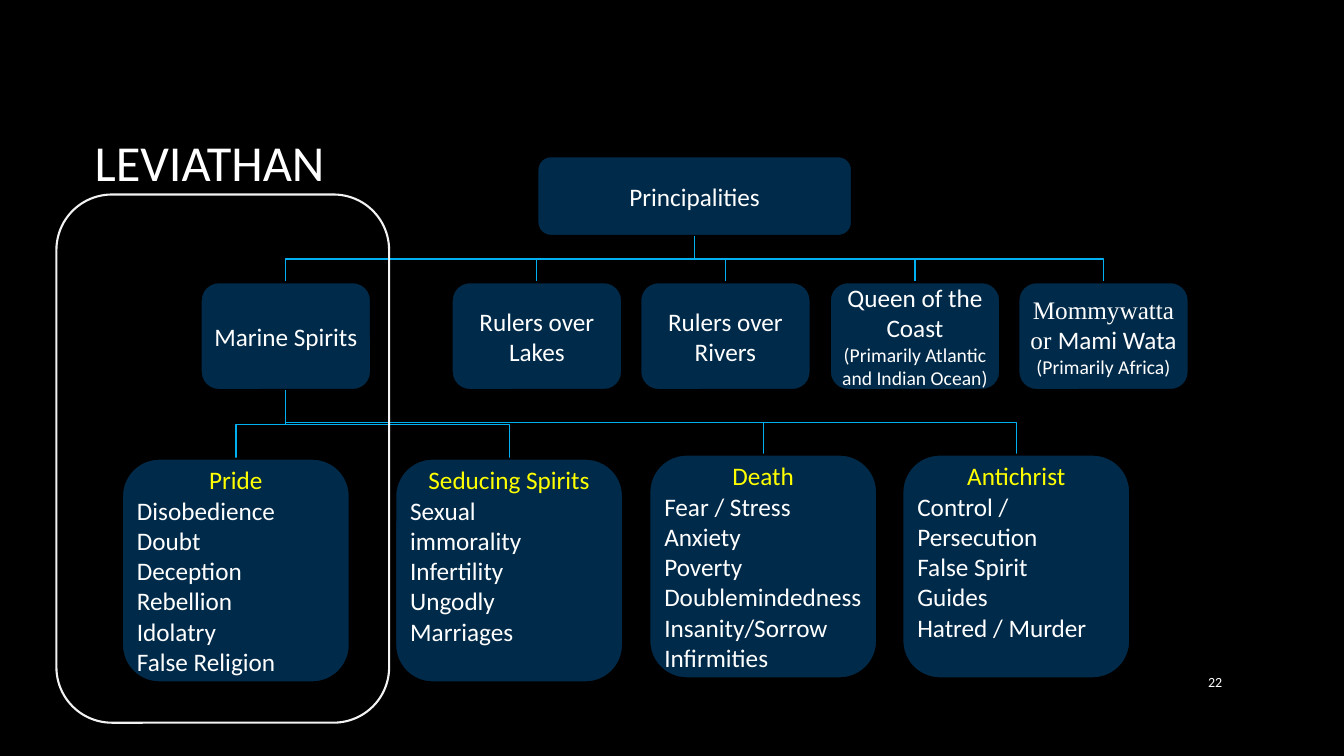
from lxml import etree
from pptx import Presentation
from pptx.dml.color import RGBColor
from pptx.enum.shapes import MSO_CONNECTOR, MSO_SHAPE
from pptx.enum.text import MSO_ANCHOR, PP_ALIGN
from pptx.oxml.ns import qn
from pptx.util import Inches, Pt

BLACK = RGBColor(0x00, 0x00, 0x00)
WHITE = RGBColor(0xFF, 0xFF, 0xFF)
OFF_WHITE = RGBColor(0xF2, 0xF2, 0xF2)
BLUE = RGBColor(0x00, 0x70, 0xC0)
SKY = RGBColor(0x00, 0xB0, 0xF0)
YELLOW = RGBColor(0xFF, 0xFF, 0x00)

SANS, SERIF = "Calibri", "Times New Roman"
BODY = {"size": Pt(18), "name": SANS, "color": WHITE}
NOTE = {**BODY, "size": Pt(14)}
HEADING = {**BODY, "color": YELLOW}
CENTER, LEFT, RIGHT = PP_ALIGN.CENTER, PP_ALIGN.LEFT, PP_ALIGN.RIGHT

ROOT_BOX = (5.33, 1.55, 3.12, 0.79)
RULER_TOP, RULER_SIZE = 2.8, (1.69, 1.07)
RULERS = [
    (1.99, [[("Marine Spirits", BODY)]]),
    (4.48, [[("Rulers over Lakes", BODY)]]),
    (6.35, [[("Rulers over Rivers", BODY)]]),
    (8.23, [[("Queen of the Coast", BODY)],
            [("(Primarily Atlantic and Indian Ocean)", NOTE)]]),
    (10.1, [[("Mommywatta or ", {**BODY, "name": SERIF}), ("Mami Wata", BODY)],
            [("(Primarily Africa)", NOTE)]]),
]
SPIRIT_SIZE, SPIRIT_LINES, LINE_HEIGHT = (2.26, 2.22), 7, 0.3
SPIRITS = [
    (1.21, 4.55, "Pride", ["Disobedience", "Doubt", "Deception", "Rebellion",
                           "Idolatry", "False Religion"]),
    (3.92, 4.55, "Seducing Spirits", ["Sexual", "immorality", "Infertility",
                                      "Ungodly", "Marriages"]),
    (6.44, 4.51, "Death", ["Fear / Stress", "Anxiety", "Poverty", "Doublemindedness",
                           "Insanity/Sorrow", "Infirmities"]),
    (8.95, 4.51, "Antichrist", ["Control /", "Persecution", "False Spirit",
                                "Guides", "Hatred / Murder"]),
]


def write(shape, lines, insets=(0.1, 0.05, 0.1, 0.05)):
    """Fill a shape with (alignment, spans) lines; insets run left, top, right, bottom."""
    frame = shape.text_frame
    frame.word_wrap = True
    frame.vertical_anchor = MSO_ANCHOR.MIDDLE
    for side, inset in zip(("left", "top", "right", "bottom"), insets):
        setattr(frame, f"margin_{side}", Inches(inset))
    for index, (alignment, spans) in enumerate(lines):
        para = frame.add_paragraph() if index else frame.paragraphs[0]
        para.alignment = alignment
        for text, style in spans:
            span = para.add_run()
            span.text = text
            for key, value in style.items():
                if key == "color":
                    span.font.color.rgb = value
                else:
                    setattr(span.font, key, value)


def add_label(page, box, text, style, alignment):
    label = page.shapes.add_textbox(*map(Inches, box))
    write(label, [(alignment, [(text, style)])])


def add_rounded(page, box, line_color):
    shape = page.shapes.add_shape(MSO_SHAPE.ROUNDED_RECTANGLE, *map(Inches, box))
    shape.shadow.inherit = False
    shape.fill.background()
    shape.line.color.rgb = line_color
    shape.line.width = Pt(1.5)
    return shape


def add_node(page, box, lines, insets):
    """Draw a see-through blue box with text."""
    node = add_rounded(page, box, BLACK)
    node.fill.solid()
    node.fill.fore_color.rgb = BLUE
    color = node._element.spPr.find(qn("a:solidFill"))[0]
    etree.SubElement(color, qn("a:alpha"), val="38000")
    write(node, lines, insets)


def add_branch(page, child, parent):
    """Draw an elbow from the top of the child box up to the bottom of the parent box."""
    child_x, child_y = child[0] + child[2] / 2, child[1]
    parent_x, parent_y = parent[0] + parent[2] / 2, parent[1] + parent[3]
    middle_x, middle_y = (child_x + parent_x) / 2, (child_y + parent_y) / 2
    half_rise, half_run = (child_y - parent_y) / 2, abs(child_x - parent_x) / 2
    turn, side = (90, 1) if child_x < parent_x else (270, -1)
    # The elbow is laid out sideways, then turned about its centre.
    ends = (middle_x + side * half_rise, middle_y + half_run,
            middle_x - side * half_rise, middle_y - half_run)
    branch = page.shapes.add_connector(MSO_CONNECTOR.ELBOW, *map(Inches, ends))
    branch.line.color.rgb = SKY
    branch.line.width = Pt(0.75)
    properties = branch._element.spPr
    properties.find(qn("a:xfrm")).set("rot", str(turn * 60000))
    etree.SubElement(properties, qn("a:effectLst"))


def add_rulers(page, parent):
    """Draw the second level and return its first box."""
    boxes = [(left, RULER_TOP, *RULER_SIZE) for left, _ in RULERS]
    for box, (_, lines) in zip(boxes, RULERS):
        add_branch(page, box, parent)
        add_node(page, box, [(CENTER, spans) for spans in lines], (0.04, 0.05, 0.04, 0.05))
    return boxes[0]


def add_spirits(page, parent):
    for left, top, heading, items in SPIRITS:
        box = (left, top, *SPIRIT_SIZE)
        lines = [(CENTER, [(heading, HEADING)])]
        lines += [(LEFT, [(item, BODY)]) for item in items]
        unused = (SPIRIT_LINES - len(lines)) * LINE_HEIGHT
        add_branch(page, box, parent)
        add_node(page, box, lines, (0.04, 0.04, 0.04, 0.04 + unused))


def add_leviathan(page, box):
    add_label(page, (box[0] + 0.28, 0.81, 11.08, 1.59), "LEVIATHAN",
              {**BODY, "size": Pt(36)}, LEFT)
    add_rounded(page, box, OFF_WHITE)


def main():
    deck = Presentation()
    deck.slide_width, deck.slide_height = Inches(13.33), Inches(7.5)
    page = deck.slides.add_slide(deck.slide_layouts[6])
    page.background.fill.solid()
    page.background.fill.fore_color.rgb = BLACK

    add_label(page, (11.62, 6.56, 0.6, 0.41), "22", {**BODY, "size": Pt(10)}, RIGHT)
    add_node(page, ROOT_BOX, [(CENTER, [("Principalities", BODY)])], (0.1, 0.05, 0.1, 0.05))
    marine = add_rulers(page, ROOT_BOX)
    add_spirits(page, marine)
    add_leviathan(page, (0.56, 1.93, 3.3, 5.24))
    deck.save("out.pptx")


if __name__ == "__main__":
    main()
